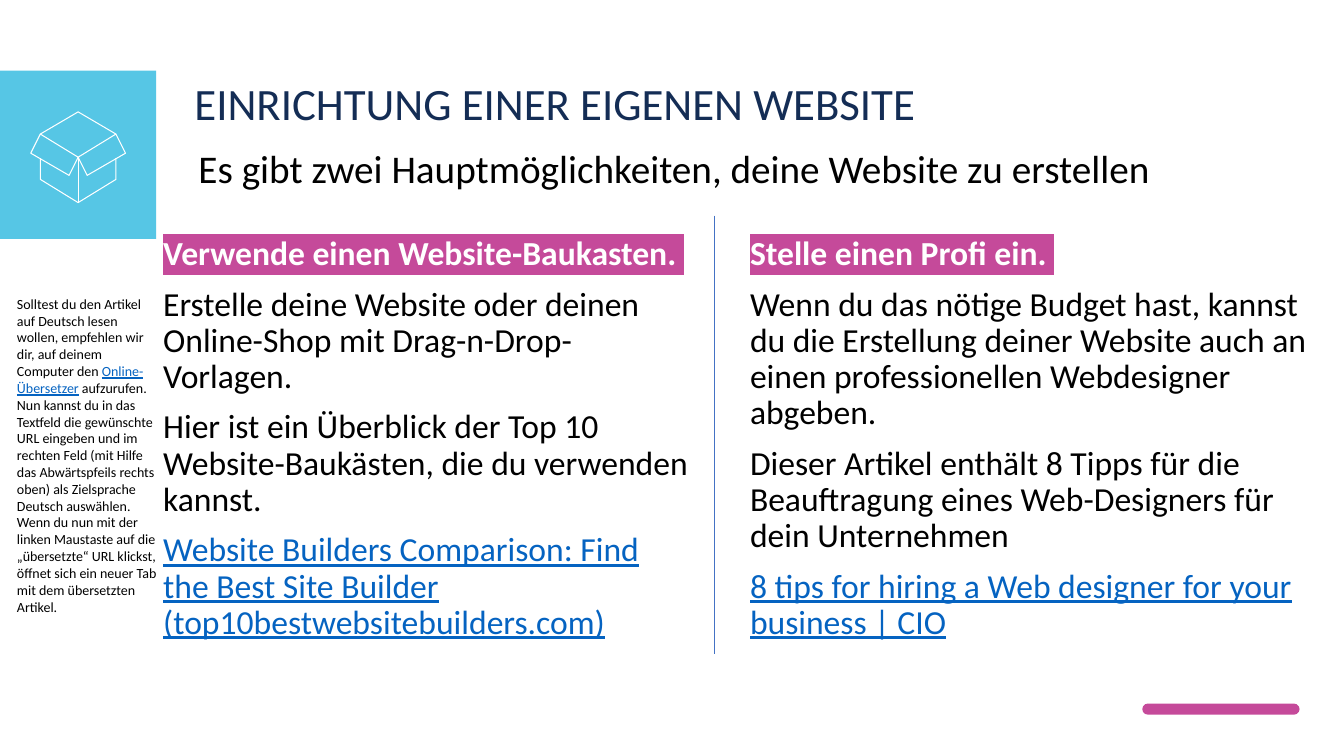
from lxml import etree
from pptx import Presentation
from pptx.dml.color import RGBColor
from pptx.enum import shapes, text
from pptx.oxml.ns import qn
from pptx.util import Inches, Pt

COLORS = {
    "sky": "1EB3DD",
    "pink": "C54A9A",
    "navy": "142D55",
    "black": "000000",
    "white": "FFFFFF",
    "link": "0563C1",
    "divider": "4472C4",
}
FONT = "Calibri"

BUILDER_COLUMN = [
    ("Verwende einen Website-Baukasten. ", "heading"),
    ("Erstelle deine Website oder deinen Online-Shop mit Drag-n-Drop-Vorlagen.", "body"),
    ("Hier ist ein Überblick der Top 10 Website-Baukästen, die du verwenden kannst.", "body"),
    ("Website Builders Comparison: Find the Best Site Builder (top10bestwebsitebuilders.com)", "link"),
]
EXPERT_COLUMN = [
    ("Stelle einen Profi ein. ", "heading"),
    ("Wenn du das nötige Budget hast, kannst du die Erstellung deiner Website auch an einen "
     "professionellen Webdesigner abgeben.", "body"),
    ("Dieser Artikel enthält 8 Tipps für die Beauftragung eines Web-Designers für dein "
     "Unternehmen", "body"),
    ("8 tips for hiring a Web designer for your business | CIO", "link"),
]
TRANSLATION_HINT = [
    ("Solltest du den Artikel auf Deutsch lesen wollen, empfehlen wir dir, auf deinem "
     "Computer den ", "body"),
    ("Online-Übersetzer", "link"),
    (" aufzurufen. Nun kannst du in das Textfeld die gewünschte URL eingeben und im rechten "
     "Feld (mit Hilfe das Abwärtspfeils rechts oben) als Zielsprache Deutsch auswählen. Wenn "
     "du nun mit der linken Maustaste auf die „übersetzte“ URL klickst, öffnet sich ein neuer "
     "Tab mit dem übersetzten Artikel.", "body"),
]


def rgb(name):
    return RGBColor.from_string(COLORS[name])


def add_block(s, kind, color, x, y, w, h):
    sp = s.shapes.add_shape(kind, Inches(x), Inches(y), Inches(w), Inches(h))
    sp.shadow.inherit = False
    sp.fill.solid()
    sp.fill.fore_color.rgb = rgb(color)
    sp.line.fill.background()
    return sp


def set_alpha(sp, percent):
    clr = sp.fill._xPr.find(qn("a:solidFill"))[0]
    etree.SubElement(clr, qn("a:alpha")).set("val", str(percent * 1000))


def add_line(parent, x1, y1, x2, y2, color, width):
    line = parent.add_connector(shapes.MSO_CONNECTOR.STRAIGHT,
                                Inches(x1), Inches(y1), Inches(x2), Inches(y2))
    line.line.color.rgb = rgb(color)
    line.line.width = Pt(width)
    etree.SubElement(line._element.spPr, qn("a:effectLst"))


def add_outline(parent, points, close=False):
    (x, y), *rest = [(Inches(px), Inches(py)) for px, py in points]
    builder = parent.build_freeform(x, y)
    builder.add_line_segments(rest, close=close)
    sp = builder.convert_to_shape()
    sp.shadow.inherit = False
    sp.fill.background()
    sp.line.color.rgb = rgb("white")
    sp.line.width = Pt(0.75)


def add_box_icon(s):
    """Draw an open carton, symmetric about its vertical edge."""
    icon = s.shapes.add_group_shape().shapes
    mid, half = 0.775, 0.375
    left, right = mid - half, mid + half
    add_outline(icon, [(left, 1.57), (left, 1.78), (mid, 2.01), (right, 1.78), (right, 1.57)])
    add_outline(icon, [(right, 1.33), (mid, 1.11), (left, 1.33)])
    for side in (-1, 1):
        flap = [(0.09, 1.74), (0.47, 1.52), (half, 1.33), (0, 1.56)]
        add_outline(icon, [(mid + side * dx, y) for dx, y in flap], close=True)
    add_line(icon, mid, 1.56, mid, 2.01, "white", 0.75)


def add_run(p, words, size, style="body", color="black"):
    r = p.add_run()
    r.text = words
    r.font.size = Pt(size)
    r.font.name = FONT
    r.font.color.rgb = rgb({"heading": "white", "link": "link"}.get(style, color))
    if style == "heading":
        r.font.bold = True
        mark = etree.Element(qn("a:highlight"))
        etree.SubElement(mark, qn("a:srgbClr")).set("val", COLORS["pink"])
        r.font._element.find(qn("a:solidFill")).addnext(mark)
    elif style == "link":
        r.font.underline = True


def add_text(s, x, y, w, h):
    tf = s.shapes.add_textbox(Inches(x), Inches(y), Inches(w), Inches(h)).text_frame
    tf.word_wrap = True
    tf.vertical_anchor = text.MSO_ANCHOR.TOP
    return tf


def add_column(s, x, w, paragraphs):
    tf = add_text(s, x, 2.3, w, 4.2)
    for i, (words, style) in enumerate(paragraphs):
        p = tf.add_paragraph() if i else tf.paragraphs[0]
        p.line_spacing = 0.9
        if i:
            p.space_before = Pt(10)
        add_run(p, words, 24, style)


def main():
    prs = Presentation()
    prs.slide_width, prs.slide_height = Inches(13.33), Inches(7.5)
    s = prs.slides.add_slide(prs.slide_layouts[6])

    tile = add_block(s, shapes.MSO_SHAPE.RECTANGLE, "sky", -0.01, 0.7, 1.56, 1.67)
    set_alpha(tile, 75)
    bar = add_block(s, shapes.MSO_SHAPE.ROUNDED_RECTANGLE, "pink", 11.33, 6.98, 1.56, 0.11)
    bar.adjustments[0] = 0.5
    add_box_icon(s)

    title = add_text(s, 1.83, 0.76, 9.75, 0.6).paragraphs[0]
    title.line_spacing = 0.9
    add_run(title, "EINRICHTUNG EINER EIGENEN WEBSITE", 32, color="navy")
    subtitle = add_text(s, 1.87, 1.38, 10.08, 0.57).paragraphs[0]
    add_run(subtitle, "Es gibt zwei Hauptmöglichkeiten, deine Website zu erstellen", 28)

    add_column(s, 1.52, 5.44, BUILDER_COLUMN)
    add_line(s.shapes, 7.09, 2.14, 7.09, 6.49, "divider", 0.5)
    add_column(s, 7.34, 5.92, EXPERT_COLUMN)

    hint = add_text(s, 0.07, 2.88, 1.58, 3.8).paragraphs[0]
    for words, style in TRANSLATION_HINT:
        add_run(hint, words, 10, style)

    prs.save("out.pptx")


if __name__ == "__main__":
    main()
